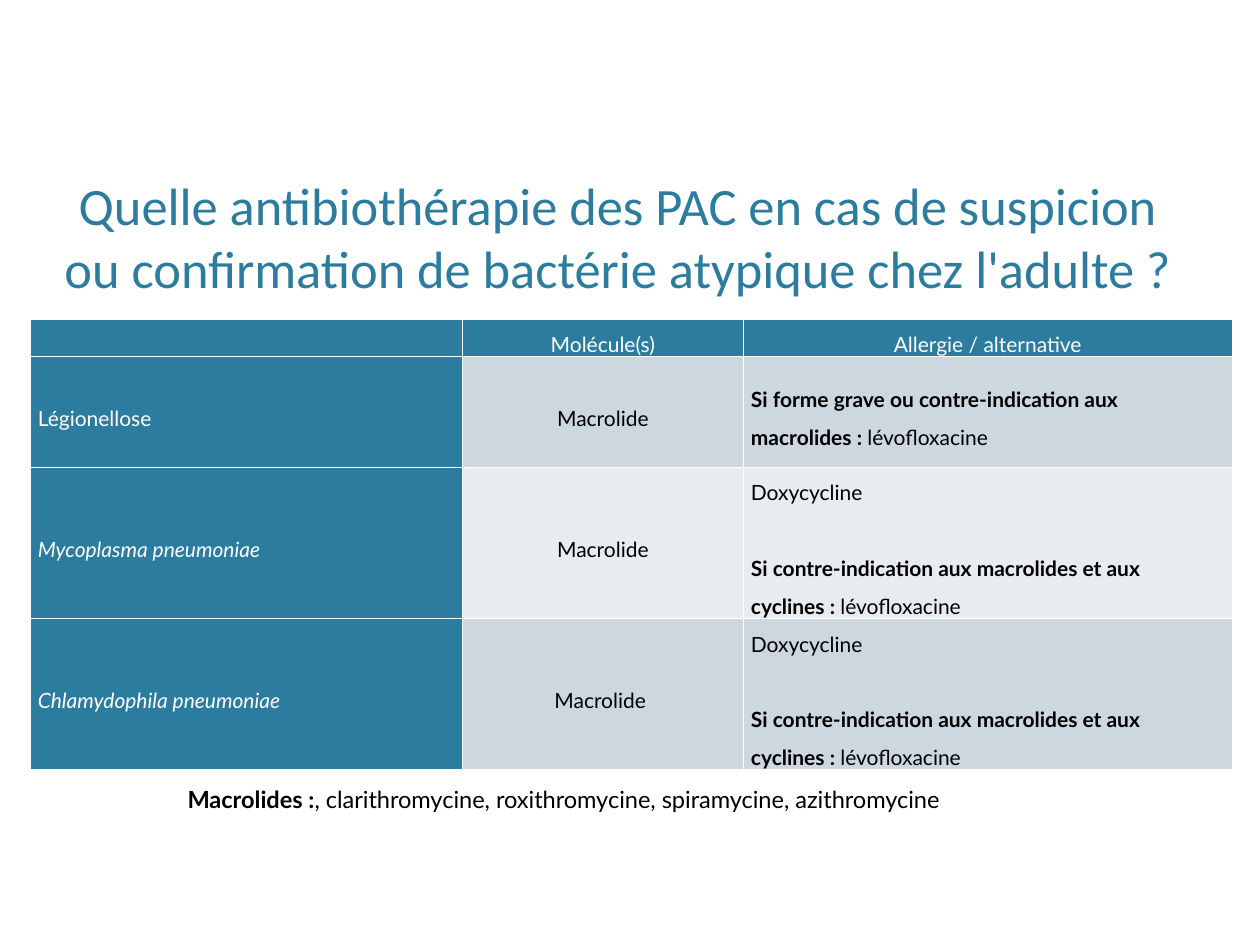
from dataclasses import dataclass

from pptx import Presentation
from pptx.dml.color import RGBColor
from pptx.enum.text import MSO_ANCHOR as Anchor, MSO_AUTO_SIZE as AutoSize, PP_ALIGN as Align
from pptx.util import Inches, Pt

TEAL, WHITE, BLACK = "2C7C9F", "FFFFFF", "000000"
BAND_FILLS = ("CDD7DF", "E8ECF0")
TABLE_SIZE = 12
BLANK_LINE = Pt(21.6)
COLUMN_WIDTHS = (3.43, 2.23, 3.88)
ROW_HEIGHTS = (0.3, 0.88, 1.2, 1.2)
HEADERS = ("", "Molécule(s)", "Allergie / alternative")


@dataclass(frozen=True)
class Span:
    text: str
    bold: bool = False
    italic: bool = False


@dataclass(frozen=True)
class Treatment:
    disease: Span
    molecule: str
    alternatives: tuple[tuple[Span, ...], ...]


LEVOFLOXACIN = Span("lévofloxacine")
CYCLINE_ALTERNATIVES = (
    (Span("Doxycycline"),),
    (Span("Si contre-indication aux macrolides et aux cyclines\u00a0: ", bold=True), LEVOFLOXACIN),
)
TREATMENTS = (
    Treatment(
        Span("Légionellose"),
        "Macrolide",
        ((Span("Si forme grave ou contre-indication aux macrolides\u00a0: ", bold=True), LEVOFLOXACIN),),
    ),
    Treatment(Span("Mycoplasma pneumoniae", italic=True), "Macrolide", CYCLINE_ALTERNATIVES),
    Treatment(Span("Chlamydophila pneumoniae", italic=True), "Macrolide ", CYCLINE_ALTERNATIVES),
)


def rgb(value: str) -> RGBColor:
    return RGBColor.from_string(value)


def add_span(paragraph, span: Span, size: float, color: str, font: str = "Lato") -> None:
    run = paragraph.add_run()
    run.text = span.text
    run.font.name = font
    run.font.size = Pt(size)
    run.font.bold = span.bold
    run.font.italic = span.italic
    run.font.color.rgb = rgb(color)


def fill_cell(cell, lines, fill: str, color: str, align=Align.LEFT) -> None:
    cell.fill.solid()
    cell.fill.fore_color.rgb = rgb(fill)
    cell.vertical_anchor = Anchor.MIDDLE
    cell.margin_left = cell.margin_right = Inches(0.06)
    cell.margin_top = cell.margin_bottom = 0
    for index, spans in enumerate(lines):
        if index == 0:
            paragraph = cell.text_frame.paragraphs[0]
        else:
            paragraph = cell.text_frame.add_paragraph()
            paragraph.space_before = BLANK_LINE
        paragraph.alignment = align
        paragraph.line_spacing = 1.5
        for span in spans:
            add_span(paragraph, span, TABLE_SIZE, color)


def add_title(slide) -> None:
    title = slide.shapes.title
    title.left, title.top = Inches(0.27), Inches(1.32)
    title.width, title.height = Inches(9.27), Inches(1.1)
    frame = title.text_frame
    frame.word_wrap = True
    frame.auto_size = AutoSize.NONE
    frame.vertical_anchor = Anchor.BOTTOM
    paragraph = frame.paragraphs[0]
    paragraph.alignment = Align.CENTER
    text = "Quelle antibiothérapie des PAC en cas de suspicion ou confirmation de bactérie atypique chez l'adulte ?"
    add_span(paragraph, Span(text), 30, TEAL, "Calibri")


def add_treatment_table(slide) -> None:
    table = slide.shapes.add_table(
        len(ROW_HEIGHTS), len(COLUMN_WIDTHS),
        Inches(0.24), Inches(2.53), Inches(sum(COLUMN_WIDTHS)), Inches(sum(ROW_HEIGHTS)),
    ).table
    for column, width in zip(table.columns, COLUMN_WIDTHS):
        column.width = Inches(width)
    for row, height in zip(table.rows, ROW_HEIGHTS):
        row.height = Inches(height)

    for index, header in enumerate(HEADERS):
        fill_cell(table.cell(0, index), [[Span(header)]], TEAL, WHITE, Align.CENTER)
    for index, treatment in enumerate(TREATMENTS):
        disease, molecule, alternative = table.rows[index + 1].cells
        band = BAND_FILLS[index % 2]
        fill_cell(disease, [[treatment.disease]], TEAL, WHITE)
        fill_cell(molecule, [[Span(treatment.molecule)]], band, BLACK, Align.CENTER)
        fill_cell(alternative, treatment.alternatives, band, BLACK)


def add_macrolide_note(slide) -> None:
    note = slide.shapes.add_textbox(Inches(1.39), Inches(6.18), Inches(7.89), Inches(0.33))
    note.text_frame.word_wrap = True
    paragraph = note.text_frame.paragraphs[0]
    add_span(paragraph, Span("Macrolides\u00a0:", bold=True), 13.5, BLACK)
    add_span(paragraph, Span(", clarithromycine, roxithromycine, spiramycine, azithromycine"), 13.5, BLACK)


def main() -> None:
    presentation = Presentation()
    presentation.slide_width, presentation.slide_height = Inches(10), Inches(7.5)
    slide = presentation.slides.add_slide(presentation.slide_layouts[5])
    add_title(slide)
    add_treatment_table(slide)
    add_macrolide_note(slide)
    presentation.save("out.pptx")


if __name__ == "__main__":
    main()
